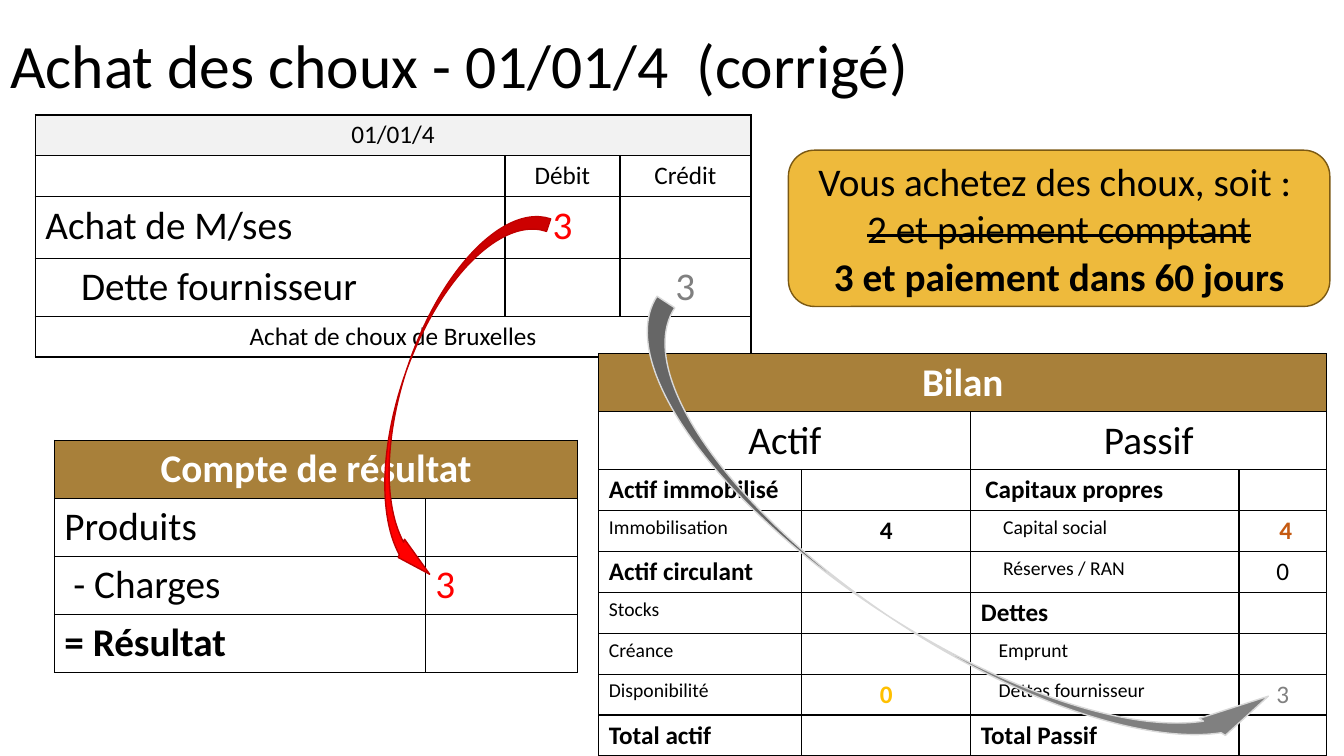
from dataclasses import dataclass

from lxml import etree
from pptx import Presentation
from pptx.dml.color import RGBColor
from pptx.enum.shapes import MSO_SHAPE
from pptx.enum.text import MSO_ANCHOR, MSO_AUTO_SIZE, PP_ALIGN
from pptx.oxml.ns import qn
from pptx.util import Inches, Pt

ROUNDED = MSO_SHAPE.ROUNDED_RECTANGLE
CURVED_ARROW = MSO_SHAPE.CURVED_RIGHT_ARROW
TOP, MIDDLE = MSO_ANCHOR.TOP, MSO_ANCHOR.MIDDLE
LEFT, CENTER = PP_ALIGN.LEFT, PP_ALIGN.CENTER
NO_AUTOFIT = MSO_AUTO_SIZE.NONE

WIDTH, HEIGHT = Inches(13.33), Inches(7.5)
FONT = "Calibri"
TITLE_SIZE, LARGE, MEDIUM, SMALL = 44, 28, 18, 14
TALL_ROW, SHORT_ROW = 7.67, 5.4
CELL_MARGIN = 0.75
COLORS = {
    "black": "000000",
    "white": "FFFFFF",
    "date": "F2F2F2",
    "header": "A8803A",
    "callout": "EEBA3C",
    "callout_edge": "7B5913",
    "debit": "FF0000",
    "debit_edge": "C00000",
    "credit": "808080",
    "credit_edge": "D9D9D9",
    "capital": "C55A11",
    "cash": "FFC000",
}


@dataclass
class Entry:
    text: str
    size: int = MEDIUM
    color: str = "black"
    bold: bool = False
    align: PP_ALIGN = LEFT
    indent: float = 0
    fill: str = ""
    span: int = 1


def across(percent):
    return int(WIDTH * percent / 100)


def down(percent):
    return int(HEIGHT * percent / 100)


def place(left, top, width, height):
    return across(left), down(top), across(width), down(height)


def rgb(name):
    return RGBColor.from_string(COLORS[name])


def style(paragraph, size, color="black", bold=False, align=LEFT):
    paragraph.alignment = align
    paragraph.font.name = FONT
    paragraph.font.size = Pt(size)
    paragraph.font.bold = bold
    paragraph.font.color.rgb = rgb(color)


def amount(text, color="black", size=MEDIUM, bold=False):
    return Entry(text, size, color, bold, CENTER)


def label(text, indent=0):
    return Entry(text, SMALL, indent=indent)


def heading(text, indent=0):
    return Entry(text, bold=True, indent=indent)


def banner(text, span):
    return Entry(text, LARGE, "white", True, CENTER, fill="header", span=span)


def add_borders(cell):
    properties = cell._tc.get_or_add_tcPr()
    for side in ("a:lnL", "a:lnR", "a:lnT", "a:lnB"):
        border = etree.SubElement(properties, qn(side), w=str(Pt(1)))
        solid = etree.SubElement(border, qn("a:solidFill"))
        etree.SubElement(solid, qn("a:srgbClr"), val=COLORS["black"])


def fill_cell(cell, entry):
    if entry.fill:
        cell.fill.solid()
        cell.fill.fore_color.rgb = rgb(entry.fill)
    cell.margin_left = across(CELL_MARGIN + entry.indent)
    cell.text = entry.text
    style(cell.text_frame.paragraphs[0], entry.size, entry.color, entry.bold, entry.align)


def add_account(slide, left, top, columns, rows, entries):
    frame = slide.shapes.add_table(
        len(rows), len(columns), *place(left, top, sum(columns), sum(rows)))
    account = frame.table
    account.first_row = account.horz_banding = False
    for column, width in zip(account.columns, columns):
        column.width = across(width)
    for row, height in zip(account.rows, rows):
        row.height = down(height)
    for cell in account.iter_cells():
        add_borders(cell)
        cell.fill.background()
    for r, line in enumerate(entries):
        c = 0
        for entry in line:
            if entry:
                cell = account.cell(r, c)
                if entry.span > 1:
                    cell.merge(account.cell(r, c + entry.span - 1))
                fill_cell(cell, entry)
            c += entry.span if entry else 1


def add_figure(slide, preset, box, fill, edge):
    figure = slide.shapes.add_shape(preset, *place(*box))
    figure.shadow.inherit = False
    figure.fill.solid()
    figure.fill.fore_color.rgb = rgb(fill)
    figure.line.color.rgb = rgb(edge)
    figure.line.width = Pt(1)
    return figure


def add_posting_arrow(slide, box, rotation, side):
    arrow = add_figure(slide, CURVED_ARROW, box, side, side + "_edge")
    arrow.rotation = rotation
    for index, value in enumerate((0.15, 0.22, 0.4)):
        arrow.adjustments[index] = value


def add_callout(slide, box, lines):
    callout = add_figure(slide, ROUNDED, box, "callout", "callout_edge")
    frame = callout.text_frame
    frame.word_wrap = True
    frame.vertical_anchor = MIDDLE
    for index, (text, struck, bold) in enumerate(lines):
        paragraph = frame.paragraphs[0] if index == 0 else frame.add_paragraph()
        run = paragraph.add_run()
        run.text = text
        style(paragraph, LARGE, bold=bold, align=CENTER)
        if struck:
            run._r.get_or_add_rPr().set("strike", "sngStrike")


def add_title(slide, text):
    title = slide.shapes.title
    title.left, title.top, title.width, title.height = place(0, 4, 86.27, 19.33)
    frame = title.text_frame
    frame.text = text
    frame.word_wrap = True
    frame.auto_size = NO_AUTOFIT
    frame.vertical_anchor = TOP
    style(frame.paragraphs[0], TITLE_SIZE)
    frame.paragraphs[0].line_spacing = 0.9


def main():
    deck = Presentation()
    deck.slide_width, deck.slide_height = WIDTH, HEIGHT
    slide = deck.slides.add_slide(deck.slide_layouts[5])
    add_title(slide, "Achat des choux - 01/01/4  (corrigé)")

    journal = [
        [Entry("01/01/4", align=CENTER, fill="date", span=3)],
        [None, amount("Débit"), amount("Crédit")],
        [Entry("Achat de M/ses", LARGE), amount("3", "debit", LARGE)],
        [Entry("Dette fournisseur", LARGE, indent=2.65), None, amount("3", "credit", LARGE)],
        [Entry("Achat de choux de Bruxelles", align=CENTER, span=3)],
    ]
    add_account(slide, 2.63, 15.2, [34.95, 8.55, 9.75],
                [SHORT_ROW, SHORT_ROW, 8.13, TALL_ROW, SHORT_ROW], journal)

    income = [
        [banner("Compte de résultat", 2)],
        [Entry("Produits", LARGE)],
        [Entry(" - Charges", LARGE), Entry("3", LARGE, "debit")],
        [Entry("= Résultat", LARGE, bold=True)],
    ]
    add_account(slide, 4.05, 58.27, [27.6, 11.33], [TALL_ROW] * 4, income)

    balance = [
        [banner("Bilan", 4)],
        [Entry(side, LARGE, align=CENTER, span=2) for side in ("Actif", "Passif")],
        [heading("Actif immobilisé"), None, heading("Capitaux propres", 0.33)],
        [label("Immobilisation"), amount("4", bold=True),
         label("Capital social", 1.65), amount(" 4", "capital", bold=True)],
        [heading("Actif circulant"), None, label("Réserves / RAN", 1.65), amount("0")],
        [label("Stocks"), None, heading("Dettes")],
        [label("Créance"), None, label("Emprunt", 1.32)],
        [label("Disponibilité"), amount("0", "cash", bold=True),
         label("Dettes fournisseur", 1.32), amount("3", "credit")],
        [heading("Total actif"), None, heading("Total Passif")],
    ]
    add_account(slide, 44.56, 46.8, [15.08, 12.6, 19.95, 6.53],
                [TALL_ROW] * 2 + [SHORT_ROW] * 7, balance)

    add_callout(slide, (58.66, 19.87, 40.29, 20.67), [
        ("Vous achetez des choux, soit : ", False, False),
        ("2 et paiement comptant", True, False),
        ("3 et paiement dans 60 jours", False, True),
    ])
    add_posting_arrow(slide, (63.99, 24.67, 10.5, 98.67), 303.2, "credit")
    add_posting_arrow(slide, (30, 25.73, 6.53, 50.93), 18.8, "debit")
    deck.save("out.pptx")


if __name__ == "__main__":
    main()
